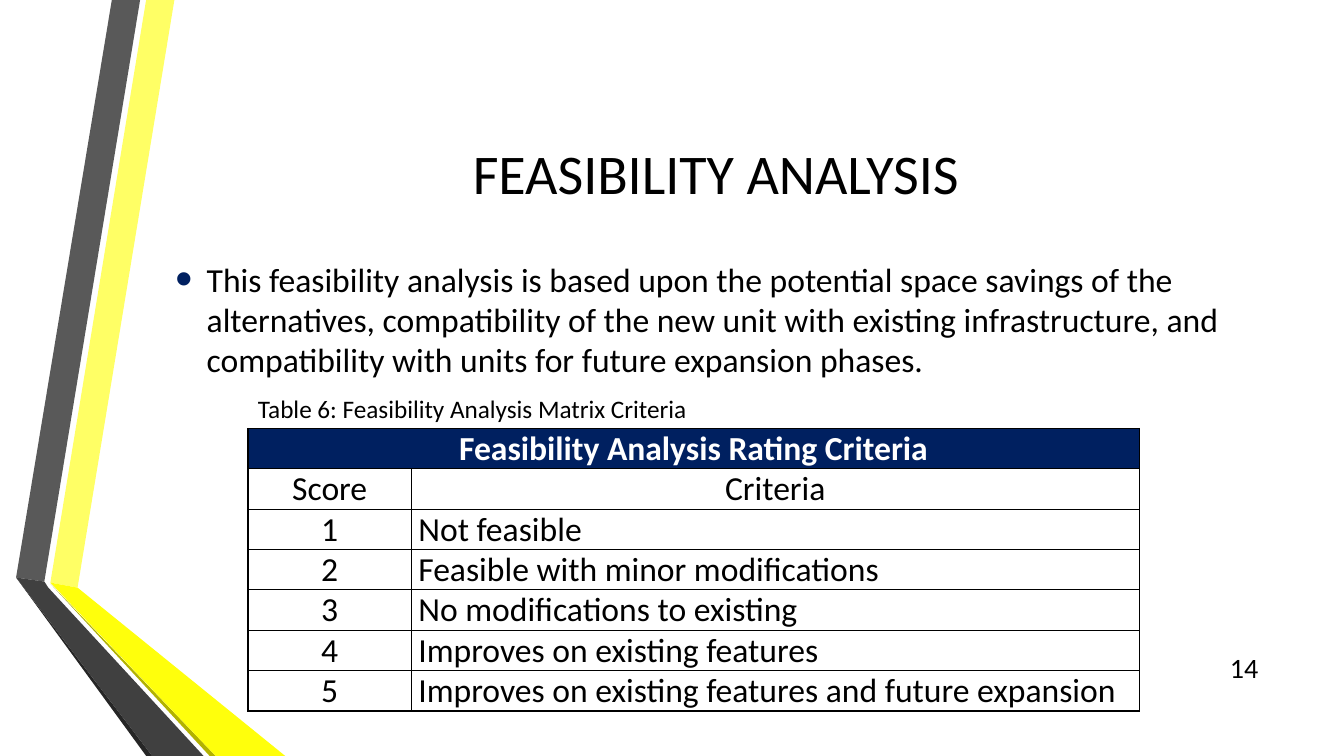
"""Build the feasibility analysis slide with its rating criteria table."""
from dataclasses import dataclass

import pptx
import pptx.dml.color
import pptx.enum.text
import pptx.oxml
import pptx.oxml.ns
import pptx.util

Inches = pptx.util.Inches
Pt = pptx.util.Pt
ALIGN = pptx.enum.text.PP_ALIGN
MIDDLE = pptx.enum.text.MSO_ANCHOR.MIDDLE
FIT = pptx.enum.text.MSO_AUTO_SIZE


@dataclass(frozen=True)
class Theme:
    font: str = "Calibri"
    text: str = "000000"
    inverse: str = "FFFFFF"
    accent: str = "002060"
    title_size: int = 40
    body_size: int = 24
    number_size: int = 20
    caption_size: int = 18
    grey: str = "595959"
    grey_dark: str = "404040"
    grey_edge: str = "262626"
    yellow: str = "FFFF65"
    yellow_bright: str = "FFFF0C"
    yellow_edge: str = "B2B200"


class SlideBuilder:
    def __init__(self, slide, theme):
        self.s = slide
        self.theme = theme

    def color(self, value):
        return pptx.dml.color.RGBColor.from_string(value)

    def set_text(self, p, text, size, align=ALIGN.LEFT, color=None, bold=False):
        p.text = text
        p.alignment = align
        p.font.name = self.theme.font
        p.font.size = Pt(size)
        p.font.bold = bold
        p.font.color.rgb = self.color(color or self.theme.text)

    def place(self, sp, left, top, width, height):
        sp.left, sp.top = Inches(left), Inches(top)
        sp.width, sp.height = Inches(width), Inches(height)

    def ribbon(self, points, color):
        start, *rest = [(Inches(x), Inches(y)) for x, y in points]
        builder = self.s.shapes.build_freeform(*start)
        builder.add_line_segments(rest, close=True)
        sp = builder.convert_to_shape()
        sp.shadow.inherit = False
        sp.fill.solid()
        sp.fill.fore_color.rgb = self.color(color)
        sp.line.fill.background()

    def title(self, text, *box):
        sp = self.s.shapes.title
        self.place(sp, *box)
        tf = sp.text_frame
        tf.vertical_anchor = MIDDLE
        tf.auto_size = FIT.NONE
        self.set_text(tf.paragraphs[0], text, self.theme.title_size, ALIGN.CENTER)

    def bullet(self, text, *box):
        sp = self.s.placeholders[1]
        self.place(sp, *box)
        tf = sp.text_frame
        tf.vertical_anchor = MIDDLE
        tf.auto_size = FIT.NONE
        tf.margin_bottom = Inches(0.5)
        p = tf.paragraphs[0]
        self.set_text(p, text, self.theme.body_size)
        p.space_before, p.space_after = Pt(0), Pt(0)
        pPr = p._p.get_or_add_pPr()
        pPr.set("marL", str(Inches(0.31)))
        pPr.set("indent", str(-Inches(0.31)))
        ns = pptx.oxml.ns.nsdecls("a")
        defaults = pPr.find(pptx.oxml.ns.qn("a:defRPr"))
        for xml in (
            f'<a:buClr {ns}><a:srgbClr val="{self.theme.accent}"/></a:buClr>',
            f'<a:buSzPct {ns} val="145000"/>',
            f'<a:buFont {ns} typeface="Arial"/>',
            f'<a:buChar {ns} char="•"/>',
        ):
            defaults.addprevious(pptx.oxml.parse_xml(xml))

    def label(self, text, size, box, align=ALIGN.LEFT):
        sp = self.s.shapes.add_textbox(*map(Inches, box))
        tf = sp.text_frame
        tf.word_wrap = True
        tf.vertical_anchor = MIDDLE
        self.set_text(tf.paragraphs[0], text, size, align)

    def border(self, cell):
        tcPr = cell._tc.get_or_add_tcPr()
        for i, side in enumerate(("lnL", "lnR", "lnT", "lnB")):
            tcPr.insert(i, pptx.oxml.parse_xml(
                f'<a:{side} {pptx.oxml.ns.nsdecls("a")} w="{Pt(1)}"><a:solidFill>'
                f'<a:srgbClr val="{self.theme.text}"/></a:solidFill></a:{side}>'))

    def table(self, heading, rows, widths, row_height, left, top):
        count = len(rows) + 1
        frame = self.s.shapes.add_table(
            count, len(widths), Inches(left), Inches(top),
            Inches(sum(widths)), Inches(row_height * count))
        table = frame.table
        table.first_row = table.horz_banding = False
        for column, width in zip(table.columns, widths):
            column.width = Inches(width)
        for cell in table.iter_cells():
            cell.margin_left = cell.margin_right = Inches(0.07)
            cell.margin_top = cell.margin_bottom = 0
            cell.fill.background()
            self.border(cell)
        head = table.cell(0, 0)
        head.merge(table.cell(0, len(widths) - 1))
        head.fill.solid()
        head.fill.fore_color.rgb = self.color(self.theme.accent)
        size = self.theme.body_size
        self.set_text(head.text_frame.paragraphs[0], heading, size,
                      ALIGN.CENTER, self.theme.inverse, True)
        for i, row in enumerate(rows, 1):
            for j, text in enumerate(row):
                align = ALIGN.CENTER if i == 1 or j == 0 else ALIGN.LEFT
                p = table.cell(i, j).text_frame.paragraphs[0]
                self.set_text(p, text, size, align)


def main():
    theme = Theme()
    prs = pptx.Presentation()
    prs.slide_width, prs.slide_height = Inches(13.33), Inches(7.5)
    b = SlideBuilder(prs.slides.add_slide(prs.slide_layouts[1]), theme)

    for points, color in (
        ([(0.5, 5.78), (0.77, 5.83), (1.73, 0), (1.45, 0)], theme.yellow),
        ([(1.39, 0), (1.11, 0), (0.16, 5.73), (0.44, 5.77)], theme.grey),
        ([(0.16, 5.73), (1.45, 7.5), (1.51, 7.5)], theme.grey_edge),
        ([(0.5, 5.79), (2.08, 7.5), (2.14, 7.5)], theme.yellow_edge),
        ([(0.5, 5.78), (2.14, 7.5), (2.83, 7.5), (0.77, 5.83)], theme.yellow_bright),
        ([(2.02, 7.5), (0.48, 5.83), (0.44, 5.77), (0.16, 5.73), (1.51, 7.5)],
         theme.grey_dark),
    ):
        b.ribbon(points, color)

    b.title("FEASIBILITY ANALYSIS", 1.62, 0.75, 10.96, 1.92)
    b.bullet("This feasibility analysis is based upon the potential space savings "
             "of the alternatives, compatibility of the new unit with existing "
             "infrastructure, and compatibility with units for future expansion "
             "phases.", 1.64, 1.68, 10.96, 3.42)
    b.label("14", theme.number_size, (11.98, 6.42, 0.6, 0.4), ALIGN.RIGHT)
    criteria = (
        "Not feasible",
        "Feasible with minor modifications",
        "No modifications to existing",
        "Improves on existing features",
        "Improves on existing features and future expansion",
    )
    scores = [(str(score), text) for score, text in enumerate(criteria, 1)]
    b.table("Feasibility Analysis Rating Criteria",
            [("Score", "Criteria"), *scores], (1.62, 7.22), 0.4, 2.46, 4.25)
    b.label("Table 6: Feasibility Analysis Matrix Criteria",
            theme.caption_size, (2.46, 3.85, 5.06, 0.4))
    prs.save("out.pptx")


if __name__ == "__main__":
    main()
